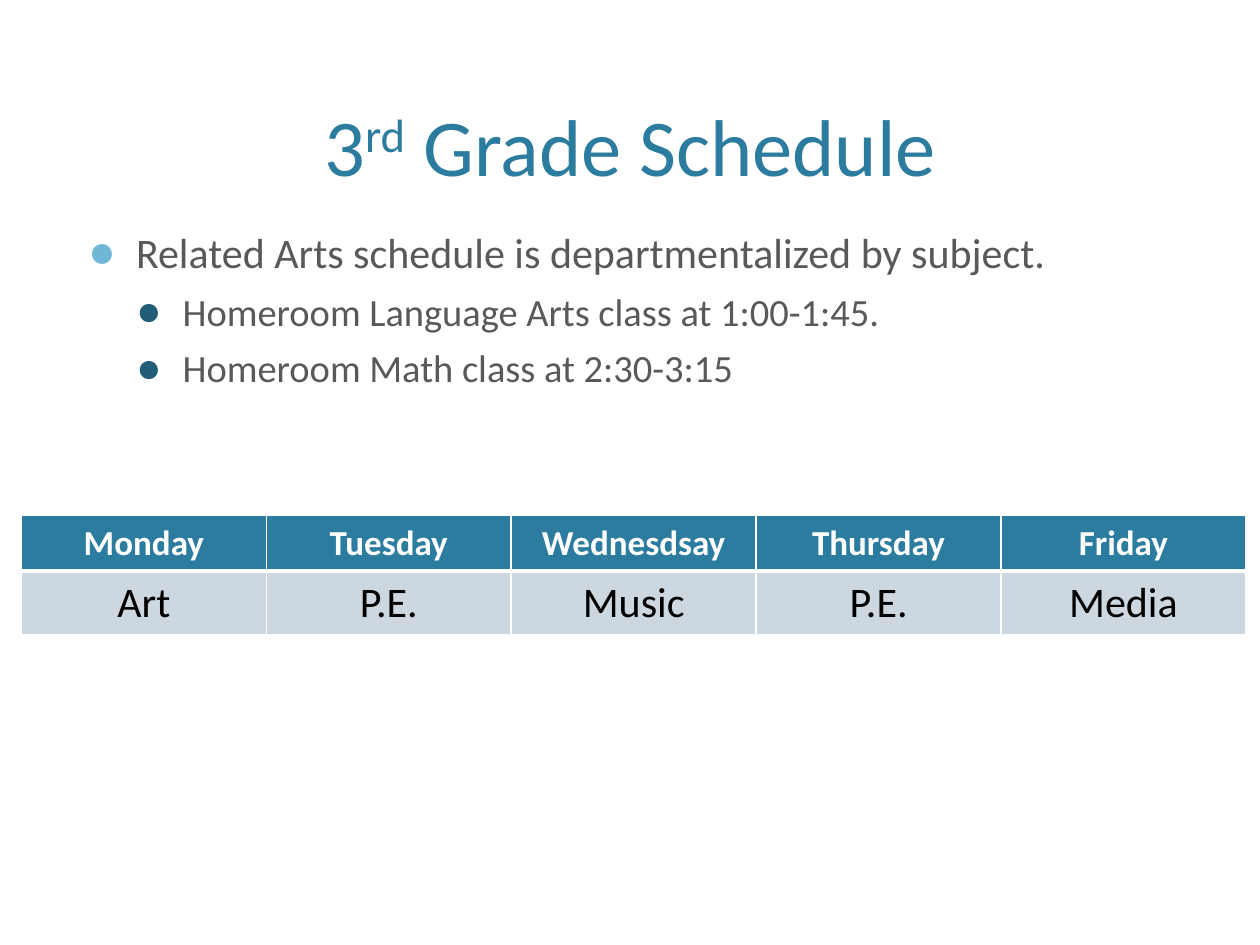
import dataclasses

import lxml.etree
import pptx
import pptx.dml.color
import pptx.enum.text
import pptx.oxml.ns
import pptx.util

Inches = pptx.util.Inches
Pt = pptx.util.Pt
qn = pptx.oxml.ns.qn
CENTER = pptx.enum.text.PP_ALIGN.CENTER

TEAL = "2C7C9F"
WHITE = "FFFFFF"
GRAY = "595959"


@dataclasses.dataclass(frozen=True)
class Bullet:
    text: str
    level: int
    size: float
    before: float
    margin: float
    hanging: float
    color: str


@dataclasses.dataclass(frozen=True)
class TableRow:
    labels: tuple[str, ...]
    height: float
    size: float
    bold: bool
    color: str
    fill: str
    top_line: float
    bottom_line: float


BULLETS = [
    Bullet("Related Arts schedule is departmentalized by subject.", 0, 24, 20, 0.38, 0.38, "6FB7D7"),
    *(
        Bullet(text, 1, 22, 6, 0.75, 0.37, "215D77")
        for text in ("Homeroom Language Arts class at 1:00-1:45.", "Homeroom Math class at 2:30-3:15")
    ),
]
ROWS = [
    TableRow(("Monday", "Tuesday", "Wednesdsay", "Thursday", "Friday"), 0.43, 20, True, WHITE, TEAL, 1, 3),
    TableRow(("Art", "P.E.", "Music", "P.E.", "Media"), 0.5, 24, False, "000000", "CDD7DF", 3, 1),
]


def rgb(color: str) -> pptx.dml.color.RGBColor:
    return pptx.dml.color.RGBColor.from_string(color)


def place(box, left: float, top: float, width: float, height: float) -> None:
    box.left, box.top = Inches(left), Inches(top)
    box.width, box.height = Inches(width), Inches(height)


def style_spans(para, size: float, color: str, bold: bool = False) -> None:
    for span in para.runs:
        span.font.name = "Calibri"
        span.font.size = Pt(size)
        span.font.bold = bold
        span.font.color.rgb = rgb(color)


def add_title(page) -> None:
    title = page.shapes.title
    place(title, 0.6, 0.12, 8.8, 1.46)
    title.text_frame.vertical_anchor = pptx.enum.text.MSO_ANCHOR.BOTTOM
    para = title.text_frame.paragraphs[0]
    para.alignment = CENTER
    for text in ("3", "rd", " Grade Schedule"):
        para.add_run().text = text
    style_spans(para, 46, TEAL)
    para.runs[1].font._element.set("baseline", "30000")


def format_bullet(para, bullet: Bullet) -> None:
    para.level = bullet.level
    para.space_before = Pt(bullet.before)
    style_spans(para, bullet.size, GRAY)
    properties = para._p.get_or_add_pPr()
    properties.set("marL", str(Inches(bullet.margin)))
    properties.set("indent", str(-Inches(bullet.hanging)))
    color = lxml.etree.SubElement(properties, qn("a:buClr"))
    lxml.etree.SubElement(color, qn("a:srgbClr"), val=bullet.color)
    lxml.etree.SubElement(properties, qn("a:buSzPct"), val="110000")
    lxml.etree.SubElement(properties, qn("a:buChar"), char="●")


def add_bullets(page) -> None:
    body = page.placeholders[1]
    place(body, 0.6, 1.75, 8.8, 4.75)
    body.text_frame.text = "\n".join(bullet.text for bullet in BULLETS)
    for para, bullet in zip(body.text_frame.paragraphs, BULLETS):
        format_bullet(para, bullet)


def set_borders(cell, top: float, bottom: float) -> None:
    properties = cell._tc.get_or_add_tcPr()
    sides = (("a:lnL", 1), ("a:lnR", 1), ("a:lnT", top), ("a:lnB", bottom))
    for position, (side, width) in enumerate(sides):
        line = lxml.etree.Element(qn(side), w=str(Pt(width)))
        fill = lxml.etree.SubElement(line, qn("a:solidFill"))
        lxml.etree.SubElement(fill, qn("a:srgbClr"), val=WHITE)
        properties.insert(position, line)


def add_schedule(page) -> None:
    column_width = 1.944
    columns = len(ROWS[0].labels)
    height = sum(row.height for row in ROWS)
    frame = page.shapes.add_table(
        len(ROWS), columns, Inches(0.17), Inches(4.09), Inches(column_width * columns), Inches(height)
    )
    table = frame.table
    for column in table.columns:
        column.width = Inches(column_width)
    for row_index, row in enumerate(ROWS):
        table.rows[row_index].height = Inches(row.height)
        for column_index, label in enumerate(row.labels):
            cell = table.cell(row_index, column_index)
            cell.fill.solid()
            cell.fill.fore_color.rgb = rgb(row.fill)
            cell.text_frame.text = label
            para = cell.text_frame.paragraphs[0]
            para.alignment = CENTER
            style_spans(para, row.size, row.color, row.bold)
            set_borders(cell, row.top_line, row.bottom_line)


def main() -> None:
    deck = pptx.Presentation()
    deck.slide_width, deck.slide_height = Inches(10), Inches(7.5)
    page = deck.slides.add_slide(deck.slide_layouts[1])
    add_title(page)
    add_bullets(page)
    add_schedule(page)
    deck.save("out.pptx")


if __name__ == "__main__":
    main()
